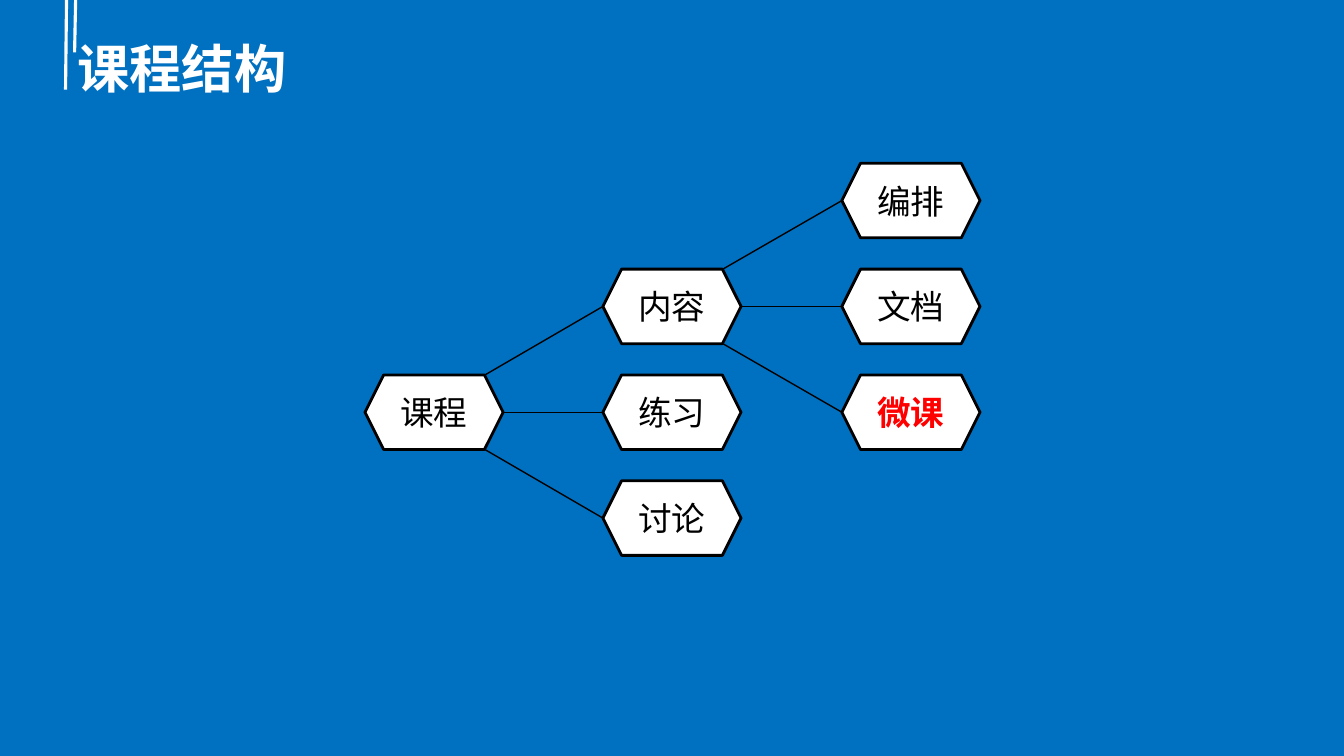
from lxml import etree
from pptx import Presentation
from pptx.dml.color import RGBColor
from pptx.enum import shapes, text
from pptx.oxml.ns import qn
from pptx.util import Inches, Pt

BLUE = RGBColor(0x00, 0x70, 0xC0)
WHITE = RGBColor(0xFF, 0xFF, 0xFF)
BLACK = RGBColor(0x00, 0x00, 0x00)
RED = RGBColor(0xFF, 0x00, 0x00)
FACE = "Noto Sans CJK SC"

deck = Presentation()
deck.slide_width, deck.slide_height = Inches(13.33), Inches(7.5)
slide = deck.slides.add_slide(deck.slide_layouts[6])
slide.background.fill.solid()
slide.background.fill.fore_color.rgb = BLUE


def write(shape, words, color, form):
    frame = shape.text_frame
    frame.word_wrap = True
    frame.vertical_anchor = text.MSO_ANCHOR.MIDDLE
    run = frame.paragraphs[0].add_run()
    run.text = words
    for key, value in form.items():
        setattr(run.font, key, value)
    run.font.color.rgb = color
    etree.SubElement(run.font._element, qn("a:ea"), typeface=FACE)


def link(start, end, color, width):
    line = slide.shapes.add_connector(
        shapes.MSO_CONNECTOR.STRAIGHT, *map(Inches, start + end))
    line.line.color.rgb = color
    line.line.width = Pt(width)
    etree.SubElement(line._element.spPr, qn("a:effectLst"))


for top, foot, drop in [(0.66, 0.65, 0.89), (0.75, 0.74, 0.52)]:
    link((top, 0), (foot, drop), WHITE, 2.25)

title = slide.shapes.add_textbox(
    Inches(0.67), Inches(0.3), Inches(12), Inches(0.74))
write(title, "课程结构", WHITE, {"name": FACE, "size": Pt(37.3), "bold": True})

WIDE, HIGH, INSET = 1.37, 0.74, 0.18
COLS = [3.62, 5.98, 8.35]
TOP, STEP = 1.62, 1.05
nodes = [
    ("课程", 0, 2),
    ("内容", 1, 1), ("练习", 1, 2), ("讨论", 1, 3),
    ("编排", 2, 0), ("文档", 2, 1), ("微课", 2, 2),
]

for col, row in [(0, 2), (1, 1)]:
    left, mid = COLS[col], TOP + row * STEP + HIGH / 2
    for side in (-1, 0, 1):
        edge = left + WIDE - abs(side) * INSET
        link((edge, mid + side * HIGH / 2),
             (COLS[col + 1], mid + side * STEP), BLACK, 1)

for words, col, row in nodes:
    node = slide.shapes.add_shape(
        shapes.MSO_SHAPE.HEXAGON, Inches(COLS[col]), Inches(TOP + row * STEP),
        Inches(WIDE), Inches(HIGH))
    node.shadow.inherit = False
    node.fill.solid()
    node.fill.fore_color.rgb = WHITE
    node.line.color.rgb = BLACK
    node.line.width = Pt(2)
    key = words == "微课"
    write(node, words, RED if key else BLACK,
          {"name": FACE, "size": Pt(24), "bold": key})
    frame = node.text_frame
    frame.margin_left = frame.margin_right = 0
    frame.paragraphs[0].alignment = text.PP_ALIGN.CENTER

deck.save("out.pptx")
